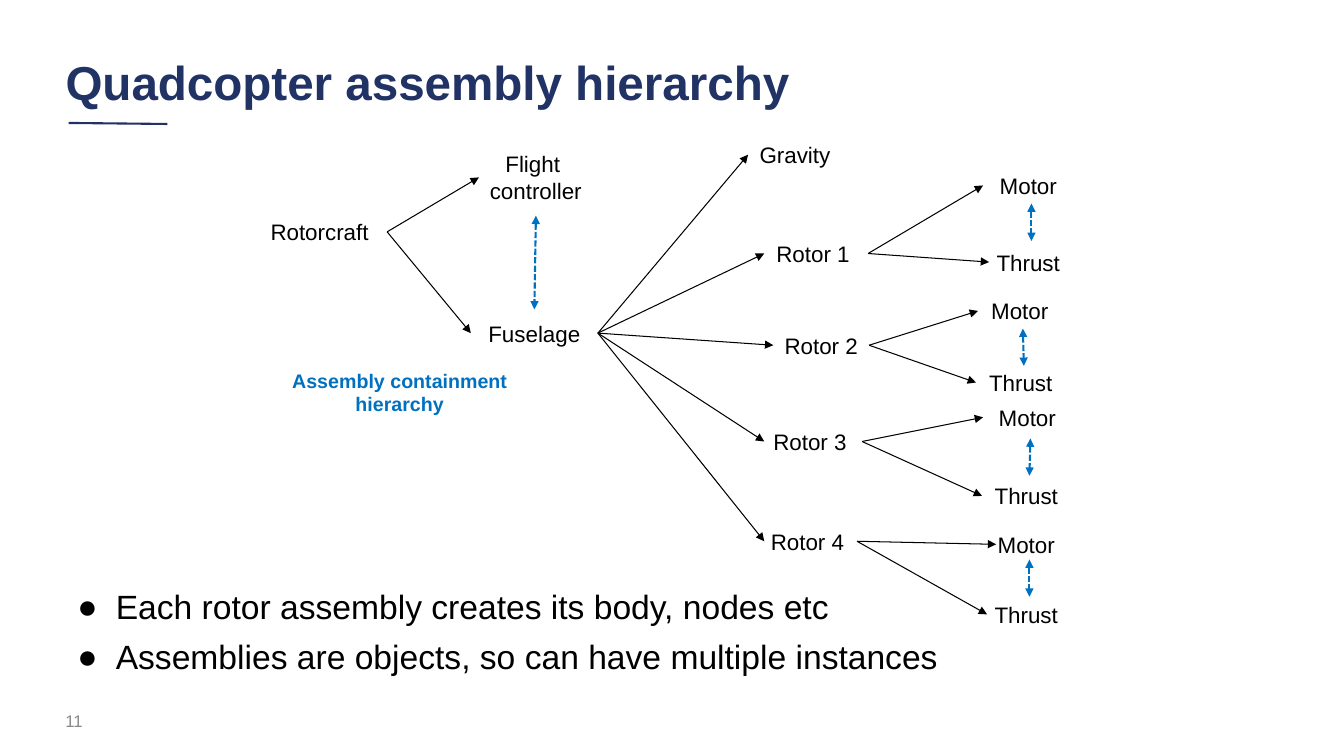
from lxml.etree import SubElement
from pptx import Presentation
from pptx.dml.color import RGBColor
from pptx.enum.dml import MSO_LINE
from pptx.enum.shapes import MSO_CONNECTOR, MSO_SHAPE
from pptx.enum.text import MSO_ANCHOR, MSO_AUTO_SIZE, PP_ALIGN
from pptx.oxml.ns import qn
from pptx.util import Pt

PX = 9144  # one px is a hundredth of an inch
NAVY, BLUE, BLACK, GREY = "213265", "0070C0", "000000", "888888"
TOP, LEFT, BOTTOM, RIGHT = range(4)  # connection sites of a node

# Node: text and box (left, top, width, height)
ROOT = ("Rotorcraft", (250, 208, 134, 44))
CONTROLLER = ("Flight \ncontroller", (475, 138, 113, 76))
FUSELAGE = ("Fuselage", (467, 307, 126, 47))
GRAVITY = ("Gravity", (742, 132, 93, 43))
# Each rotor with the boxes of its motor and thrust
ROTORS = [
    ("Rotor 1 ", (758, 229, 103, 45), (975, 166, 96, 36), (981, 239, 84, 42)),
    ("Rotor 2", (767, 321, 95, 43), (970, 291, 89, 35), (968, 363, 95, 33)),
    ("Rotor 3 ", (758, 415, 97, 46), (975, 393, 94, 42), (974, 472, 94, 40)),
    ("Rotor 4 ", (758, 513, 92, 48), (988, 525, 66, 30), (979, 592, 84, 35)),
]
BULLETS = [
    "Each rotor assembly creates its body, nodes etc",
    "Assemblies are objects, so can have multiple instances",
]


def color(value):
    return RGBColor.from_string(value)


def scaled(box):
    return [length * PX for length in box]


def set_attributes(target, values):
    for name, value in values.items():
        setattr(target, name, value)


def write(shape, text, size, fill, bold=False, frame=None, paragraph_format=None):
    """Fill a shape with text, one paragraph to each line."""
    text_frame = shape.text_frame
    set_attributes(text_frame, {"word_wrap": True, "auto_size": MSO_AUTO_SIZE.NONE,
                                **(frame or {})})
    text_frame.text = text
    for paragraph in text_frame.paragraphs:
        set_attributes(paragraph, paragraph_format or {})
        for run in paragraph.runs:
            set_attributes(run.font, {"name": "Arial", "size": Pt(size), "bold": bold})
            run.font.color.rgb = color(fill)


def add_line(slide, start, end, fill, width):
    line = slide.shapes.add_connector(MSO_CONNECTOR.STRAIGHT, *scaled(start + end))
    line.line.color.rgb = color(fill)
    line.line.width = Pt(width)
    SubElement(line._element.spPr, qn("a:effectLst"))
    return line


def add_node(slide, text, box):
    shape = slide.shapes.add_shape(MSO_SHAPE.ROUNDED_RECTANGLE, *scaled(box))
    shape.shadow.inherit = False
    shape.fill.background()
    shape.line.fill.background()
    write(shape, text, 16, BLACK,
          frame={"word_wrap": False, "vertical_anchor": MSO_ANCHOR.MIDDLE},
          paragraph_format={"alignment": PP_ALIGN.CENTER})
    return shape


def link(slide, source, source_site, target, target_site, fill, width, heads):
    """Join two nodes by an arrow."""
    arrow = add_line(slide, (0, 0), (0, 0), fill, width)
    arrow.begin_connect(source, source_site)
    arrow.end_connect(target, target_site)
    outline = arrow.line._get_or_add_ln()
    for head in heads:
        SubElement(outline, qn(f"a:{head}"), type="triangle")
    return arrow


def add_children(slide, parent, children):
    for child in children:
        link(slide, parent, RIGHT, child, LEFT, BLACK, 0.75, ["tailEnd"])


def add_exchange(slide, upper, lower):
    arrow = link(slide, upper, BOTTOM, lower, TOP, BLUE, 1.5, ["headEnd", "tailEnd"])
    arrow.line.dash_style = MSO_LINE.SQUARE_DOT


def add_heading(slide, box):
    left, top, width, height = box
    title = slide.shapes.title
    set_attributes(title, dict(zip(("left", "top", "width", "height"), scaled(box))))
    write(title, "Quadcopter assembly hierarchy", 34, NAVY, True,
          {"vertical_anchor": MSO_ANCHOR.MIDDLE},
          {"alignment": PP_ALIGN.LEFT, "line_spacing": 0.9})
    bottom = top + height
    add_line(slide, (left + 13, bottom), (left + 111, bottom + 1), NAVY, 1.5)


def add_hierarchy(slide):
    # Rotorcraft and its two parts
    root, controller, fuselage, gravity = [
        add_node(slide, *node) for node in (ROOT, CONTROLLER, FUSELAGE, GRAVITY)]
    add_children(slide, root, [controller, fuselage])
    add_exchange(slide, controller, fuselage)
    # Fuselage parts, with a motor and thrust for each rotor
    parts = [gravity]
    for name, rotor_box, motor_box, thrust_box in ROTORS:
        rotor = add_node(slide, name, rotor_box)
        motor = add_node(slide, "Motor ", motor_box)
        thrust = add_node(slide, "Thrust ", thrust_box)
        add_children(slide, rotor, [motor, thrust])
        add_exchange(slide, motor, thrust)
        parts.append(rotor)
    add_children(slide, fuselage, parts)


def add_caption(slide, box):
    caption = slide.shapes.add_textbox(*scaled(box))
    write(caption, "Assembly containment hierarchy", 14, BLUE, True,
          paragraph_format={"alignment": PP_ALIGN.CENTER})


def add_bullets(slide, box):
    body = slide.shapes.add_textbox(*scaled(box))
    write(body, "\n".join(BULLETS), 24, BLACK, paragraph_format={"line_spacing": 0.9})
    for index, paragraph in enumerate(body.text_frame.paragraphs):
        if index:
            paragraph.space_before = Pt(10)
        properties = paragraph._p.get_or_add_pPr()
        properties.set("marL", str(50 * PX))
        properties.set("indent", str(-38 * PX))
        bullet_color = SubElement(properties, qn("a:buClr"))
        SubElement(bullet_color, qn("a:srgbClr"), val=BLACK)
        SubElement(properties, qn("a:buFont"), typeface="Arial")
        SubElement(properties, qn("a:buChar"), char="●")


def add_page_number(slide, box):
    number = slide.shapes.add_textbox(*scaled(box))
    write(number, "11", 12, GREY, frame={"vertical_anchor": MSO_ANCHOR.MIDDLE})


def main():
    presentation = Presentation()
    set_attributes(presentation, {"slide_width": 1333 * PX, "slide_height": 750 * PX})
    slide = presentation.slides.add_slide(presentation.slide_layouts[5])
    add_heading(slide, (55, 46, 1112, 76))
    add_bullets(slide, (55, 581, 1224, 146))
    add_hierarchy(slide)
    add_caption(slide, (238, 361, 317, 57))
    add_page_number(slide, (55, 695, 300, 40))
    presentation.save("out.pptx")


if __name__ == "__main__":
    main()
